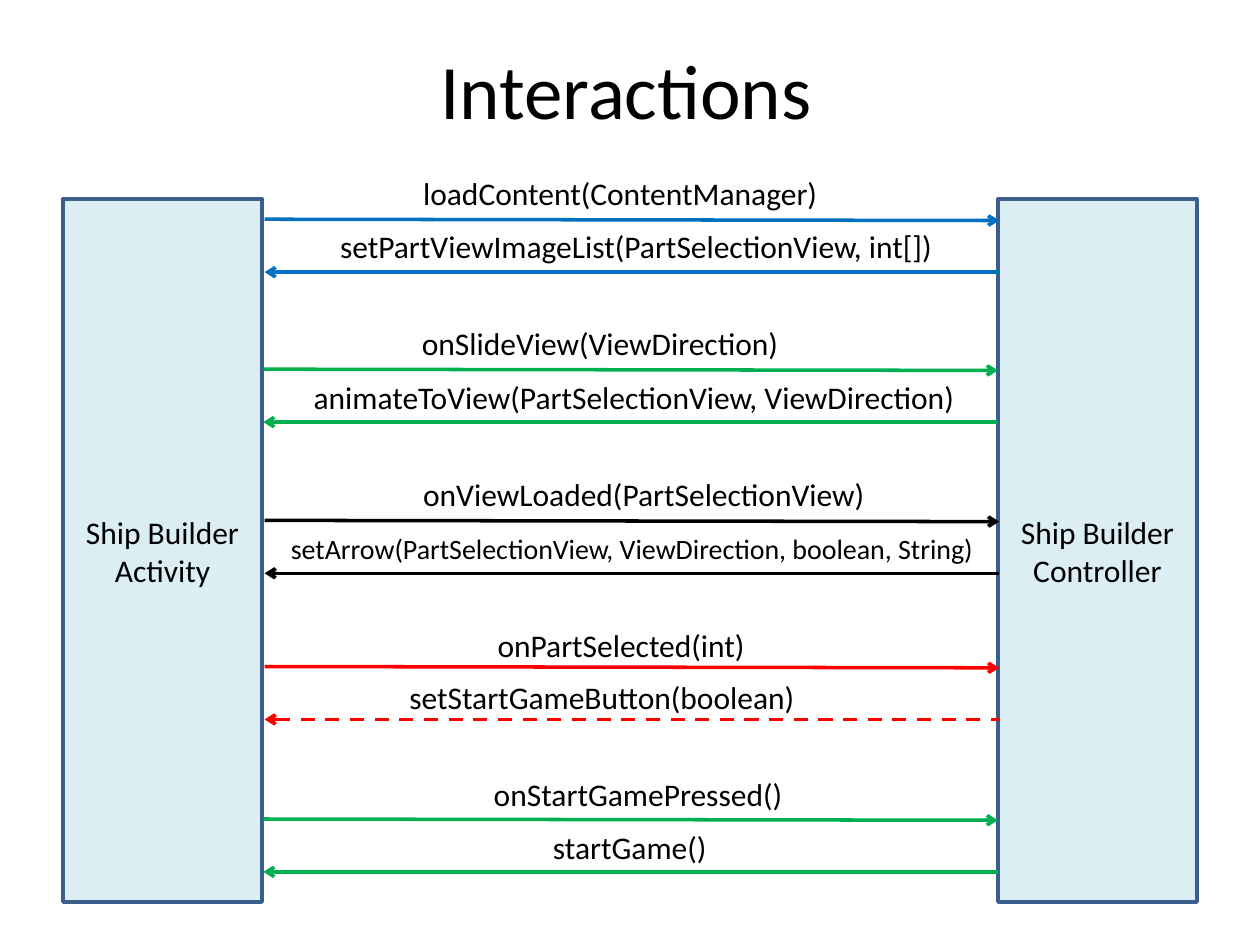
from dataclasses import dataclass

from lxml import etree
from pptx import Presentation
from pptx.dml.color import RGBColor
from pptx.enum.dml import MSO_LINE
from pptx.enum.shapes import MSO_CONNECTOR, MSO_SHAPE
from pptx.enum.text import MSO_ANCHOR, MSO_AUTO_SIZE, PP_ALIGN
from pptx.oxml.ns import qn
from pptx.shapes.group import GroupShape
from pptx.slide import Slide
from pptx.text.text import TextFrame
from pptx.util import Inches, Pt

RECTANGLE = MSO_SHAPE.RECTANGLE
STRAIGHT = MSO_CONNECTOR.STRAIGHT
DASH = MSO_LINE.DASH
MIDDLE = MSO_ANCHOR.MIDDLE
FIT_SHAPE = MSO_AUTO_SIZE.SHAPE_TO_FIT_TEXT
LEFT, CENTER = PP_ALIGN.LEFT, PP_ALIGN.CENTER

FONT = "Calibri"
COLORS = {
    "black": "000000",
    "blue": "0070C0",
    "green": "00B050",
    "red": "FF0000",
    "box fill": "DBEEF4",
    "box border": "3A5F8C",
}
LINE_WIDTH = Pt(2)
ARROW_LENGTH = 5.83
CALL_SLOPE = 0.01
REPLY_GAP = 0.42


@dataclass
class Participant:
    name: str
    left: float


@dataclass
class Message:
    text: str
    left: float
    top: float
    width: float
    size: int = 18


@dataclass
class Exchange:
    """A call to the controller and its reply, with arrows of one colour."""
    color: str
    arrow_left: float
    arrow_top: float
    call: Message
    reply: Message
    dashed_reply: bool = False


PARTICIPANTS = [
    Participant("Ship Builder\nController", 7.92),
    Participant("Ship Builder\nActivity", 0.5),
]

EXCHANGES = [
    Exchange("blue", 2.1, 1.74,
             Message("loadContent(ContentManager)", 3.26, 1.33, 3.37),
             Message("setPartViewImageList(PartSelectionView, int[])", 2.6, 1.75, 4.95)),
    Exchange("green", 2.09, 2.93,
             Message("onSlideView(ViewDirection)", 3.25, 2.52, 3.07),
             Message("animateToView(PartSelectionView, ViewDirection)", 2.39, 2.95, 5.35)),
    Exchange("black", 2.1, 4.13,
             Message("onViewLoaded(PartSelectionView)", 3.26, 3.72, 3.75),
             Message("setArrow(PartSelectionView, ViewDirection, boolean, String)",
                     2.21, 4.17, 5.7, 16)),
    Exchange("red", 2.1, 5.29,
             Message("onPartSelected(int)", 3.85, 4.92, 2.19),
             Message("setStartGameButton(boolean)", 3.15, 5.33, 3.3),
             dashed_reply=True),
    Exchange("green", 2.09, 6.5,
             Message("onStartGamePressed()", 3.82, 6.1, 2.52),
             Message("startGame()", 4.29, 6.52, 1.43)),
]


def color_of(name: str) -> RGBColor:
    return RGBColor.from_string(COLORS[name])


def write(frame: TextFrame, text: str, size: int, alignment: PP_ALIGN) -> None:
    frame.text = text
    for para in frame.paragraphs:
        para.alignment = alignment
        para.font.name = FONT
        para.font.size = Pt(size)
        para.font.color.rgb = color_of("black")


def add_title(slide: Slide, text: str) -> None:
    title = slide.shapes.title
    title.left, title.top = Inches(0.47), Inches(0.08)
    title.width, title.height = Inches(9), Inches(1.25)
    title.text_frame.vertical_anchor = MIDDLE
    write(title.text_frame, text, 44, CENTER)


def add_participant(slide: Slide, participant: Participant) -> None:
    box = slide.shapes.add_shape(RECTANGLE, Inches(participant.left), Inches(1.58),
                                 Inches(1.58), Inches(5.58))
    box.shadow.inherit = False
    box.fill.solid()
    box.fill.fore_color.rgb = color_of("box fill")
    box.line.color.rgb = color_of("box border")
    box.line.width = LINE_WIDTH
    box.text_frame.vertical_anchor = MIDDLE
    write(box.text_frame, participant.name, 18, CENTER)


def add_message(group: GroupShape, message: Message) -> None:
    height = 0.4 if message.size == 18 else 0.37
    box = group.shapes.add_textbox(Inches(message.left), Inches(message.top),
                                   Inches(message.width), Inches(height))
    frame = box.text_frame
    frame.word_wrap = False
    frame.auto_size = FIT_SHAPE
    write(frame, message.text, message.size, LEFT)


def add_arrow(group: GroupShape, left: float, top: float, slope: float,
              color: str, arrow_end: str, dashed: bool = False) -> None:
    """Draw a line from left to right, with its arrowhead at a:headEnd or a:tailEnd."""
    arrow = group.shapes.add_connector(STRAIGHT, Inches(left), Inches(top),
                                       Inches(left + ARROW_LENGTH), Inches(top + slope))
    arrow.line.color.rgb = color_of(color)
    arrow.line.width = LINE_WIDTH
    if dashed:
        arrow.line.dash_style = DASH
    properties = arrow.element.spPr
    etree.SubElement(properties.find(qn("a:ln")), qn(arrow_end), type="arrow")
    etree.SubElement(properties, qn("a:effectLst"))


def add_exchange(slide: Slide, exchange: Exchange) -> None:
    group = slide.shapes.add_group_shape()
    left, top, color = exchange.arrow_left, exchange.arrow_top, exchange.color
    add_arrow(group, left, top, CALL_SLOPE, color, "a:tailEnd")
    add_message(group, exchange.call)
    add_arrow(group, left, top + REPLY_GAP, 0, color, "a:headEnd", exchange.dashed_reply)
    add_message(group, exchange.reply)


def main() -> None:
    deck = Presentation()
    deck.slide_width, deck.slide_height = Inches(10), Inches(7.5)
    slide = deck.slides.add_slide(deck.slide_layouts.get_by_name("Title Only"))
    add_title(slide, "Interactions")
    for participant in PARTICIPANTS:
        add_participant(slide, participant)
    for exchange in EXCHANGES:
        add_exchange(slide, exchange)
    deck.save("out.pptx")


if __name__ == "__main__":
    main()
